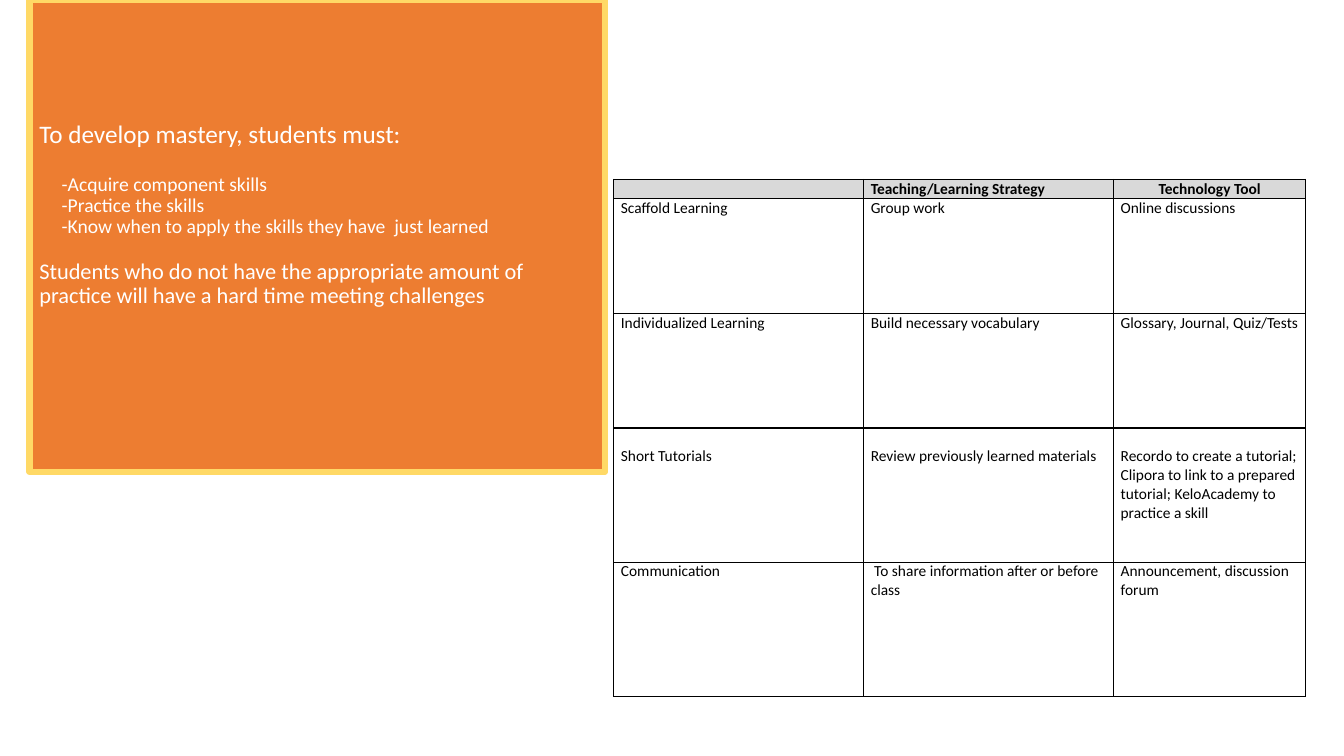
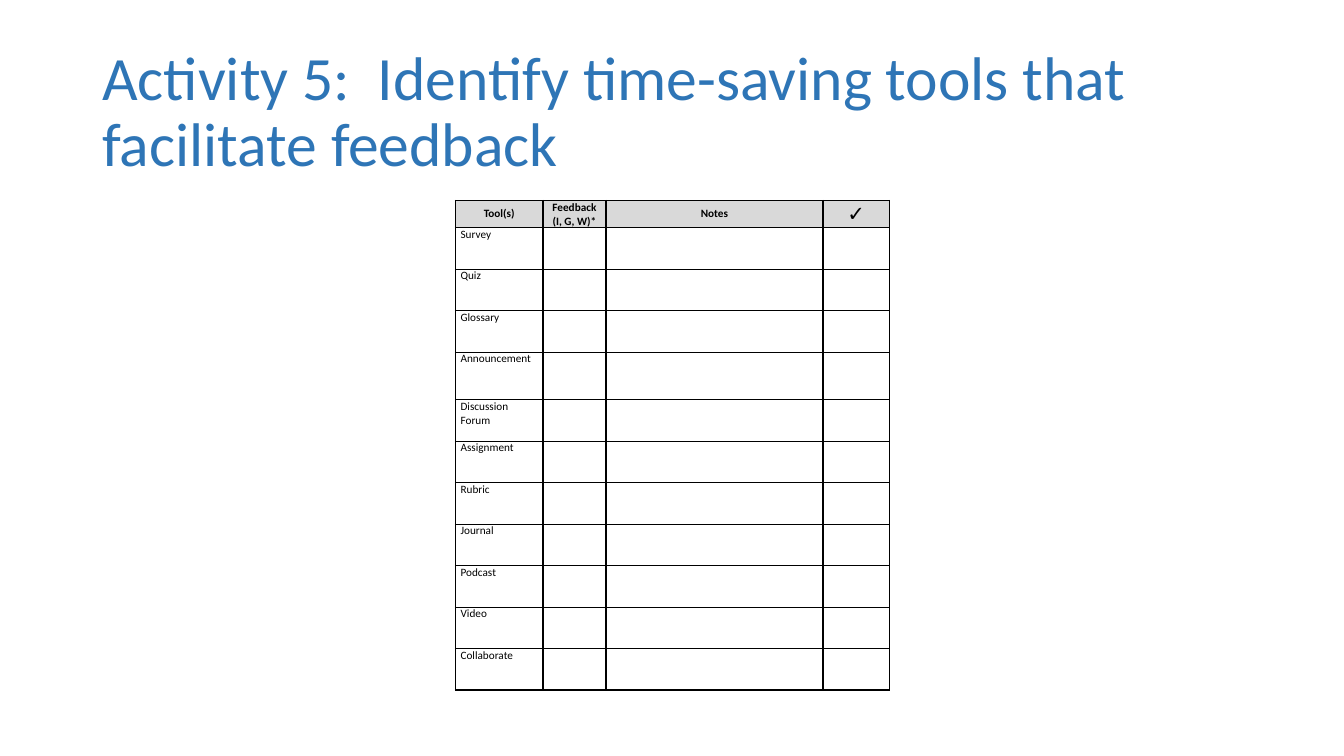
from lxml.etree import SubElement
from pptx import Presentation
from pptx.dml.color import RGBColor
from pptx.enum.shapes import MSO_SHAPE
from pptx.enum.text import MSO_ANCHOR, PP_ALIGN
from pptx.oxml.ns import qn
from pptx.util import Pt

FONT = "Calibri"
BLACK, WHITE, GRAY = "000000", "FFFFFF", "D9D9D9"
ORANGE, YELLOW, BLUE = "ED7D31", "FFD966", "2E75B6"
LEFT, CENTER = PP_ALIGN.LEFT, PP_ALIGN.CENTER
TOP, MIDDLE = MSO_ANCHOR.TOP, MSO_ANCHOR.MIDDLE


def color(code):
    return RGBColor.from_string(code)


def paint(item, code):
    item.fill.solid()
    item.fill.fore_color.rgb = color(code)


def write(frame, text, size=11, ink=BLACK, bold=False, align=LEFT,
          line=1.0, before=0, indent=0):
    for row in text.split("\n"):
        para = frame.paragraphs[-1]
        if para.runs:
            para = frame.add_paragraph()
        para.alignment = align
        para.line_spacing = line
        para.space_before = Pt(before)
        before = 0
        if indent:
            para._p.get_or_add_pPr().set("marL", str(Pt(indent)))
        if not row:
            end = SubElement(para._p, qn("a:endParaRPr"))
            end.set("sz", str(size * 100))
            continue
        run = para.add_run()
        run.text = row
        font = run.font
        font.name, font.size, font.bold = FONT, Pt(size), bold
        font.color.rgb = color(ink)


def border(cell, width=1):
    props = cell._tc.get_or_add_tcPr()
    for side in ("lnL", "lnR", "lnT", "lnB"):
        edge = SubElement(props, qn(f"a:{side}"), w=str(Pt(width)))
        fill = SubElement(edge, qn("a:solidFill"))
        SubElement(fill, qn("a:srgbClr"), val=BLACK)


def grid(slide, left, top, widths, heights, inset):
    box = [Pt(n) for n in (left, top, sum(widths), sum(heights))]
    table = slide.shapes.add_table(len(heights), len(widths), *box).table
    table.first_row = table.horz_banding = False
    for col, width in zip(table.columns, widths):
        col.width = Pt(width)
    for num, (row, height) in enumerate(zip(table.rows, heights)):
        row.height = Pt(height)
        for cell in row.cells:
            cell.margin_left = cell.margin_right = Pt(inset)
            cell.margin_top = cell.margin_bottom = 0
            border(cell)
            paint(cell, WHITE if num else GRAY)
    return table


def fill(table, rows, size):
    for num, texts in enumerate(rows):
        for cell, text in zip(table.rows[num].cells, texts):
            write(cell.text_frame, text, size=size, bold=num == 0)


def title(slide, text):
    box = slide.shapes.add_textbox(Pt(66), Pt(28.8), Pt(828), Pt(104.4))
    frame = box.text_frame
    frame.word_wrap = True
    frame.vertical_anchor = MIDDLE
    write(frame, text, size=44, ink=BLUE, line=0.9)


def panel(slide):
    shape = slide.shapes.add_shape(
        MSO_SHAPE.RECTANGLE, Pt(21), 0, Pt(411), Pt(337))
    shape.shadow.inherit = False
    paint(shape, ORANGE)
    shape.line.color.rgb = color(YELLOW)
    shape.line.width = Pt(4.5)
    frame = shape.text_frame
    frame.word_wrap = True
    frame.vertical_anchor = TOP
    frame.margin_top = Pt(87)
    style = {"ink": WHITE, "line": 0.9}
    write(frame, "To develop mastery, students must:", size=18, **style)
    write(frame, "-Acquire component skills\n-Practice the skills\n"
          "-Know when to apply the skills they have  just learned",
          size=14, before=18, indent=16, **style)
    write(frame, "Students who do not have the appropriate amount of "
          "practice will have a hard time meeting challenges",
          size=16, before=16, **style)


def mastery(slide):
    table = grid(slide, 438.5, 128.2, [178.5, 178.5, 137.2],
                 [13.5, 82, 82, 95.75, 95.75], 5)
    fill(table, [
        ("", "Teaching/Learning Strategy", "Technology Tool"),
        ("Scaffold Learning", "Group work", "Online discussions"),
        ("Individualized Learning", "Build necessary vocabulary",
         "Glossary, Journal, Quiz/Tests"),
        ("Short Tutorials", "Review previously learned materials",
         "Recordo to create a tutorial; Clipora to link to a prepared "
         "tutorial; KeloAcademy to practice a skill"),
        ("Communication", " To share information after or before class",
         "Announcement, discussion forum"),
    ], 11)
    table.cell(0, 2).text_frame.paragraphs[0].alignment = CENTER
    for cell in table.rows[3].cells:
        cell.margin_top = Pt(13.5)
    panel(slide)


def tools(slide):
    title(slide, "Activity 5:  Identify time-saving tools that "
          "facilitate feedback")
    names = ["Survey", "Quiz", "Glossary", "Announcement",
             "Discussion Forum", "Assignment", "Rubric", "Journal",
             "Podcast", "Video", "Collaborate"]
    heights = [19.5] + [34 if name == "Announcement" else 29.65
                        for name in names]
    table = grid(slide, 325.4, 143.2, [62.5, 45, 155, 47.5], heights, 3.6)
    heads = ("Tool(s)", "Feedback\n(I, G, W)*", "Notes", "✓")
    fill(table, [heads] + [(name, "", "", "") for name in names], 8)
    for cell in table.rows[0].cells:
        cell.vertical_anchor = MIDDLE
        for para in cell.text_frame.paragraphs:
            para.alignment = CENTER
    table.cell(0, 3).text_frame.paragraphs[0].runs[0].font.size = Pt(15)


def main():
    deck = Presentation()
    deck.slide_width, deck.slide_height = Pt(960), Pt(540)
    for build in (mastery, tools):
        build(deck.slides.add_slide(deck.slide_layouts[6]))
    deck.save("out.pptx")


if __name__ == "__main__":
    main()
